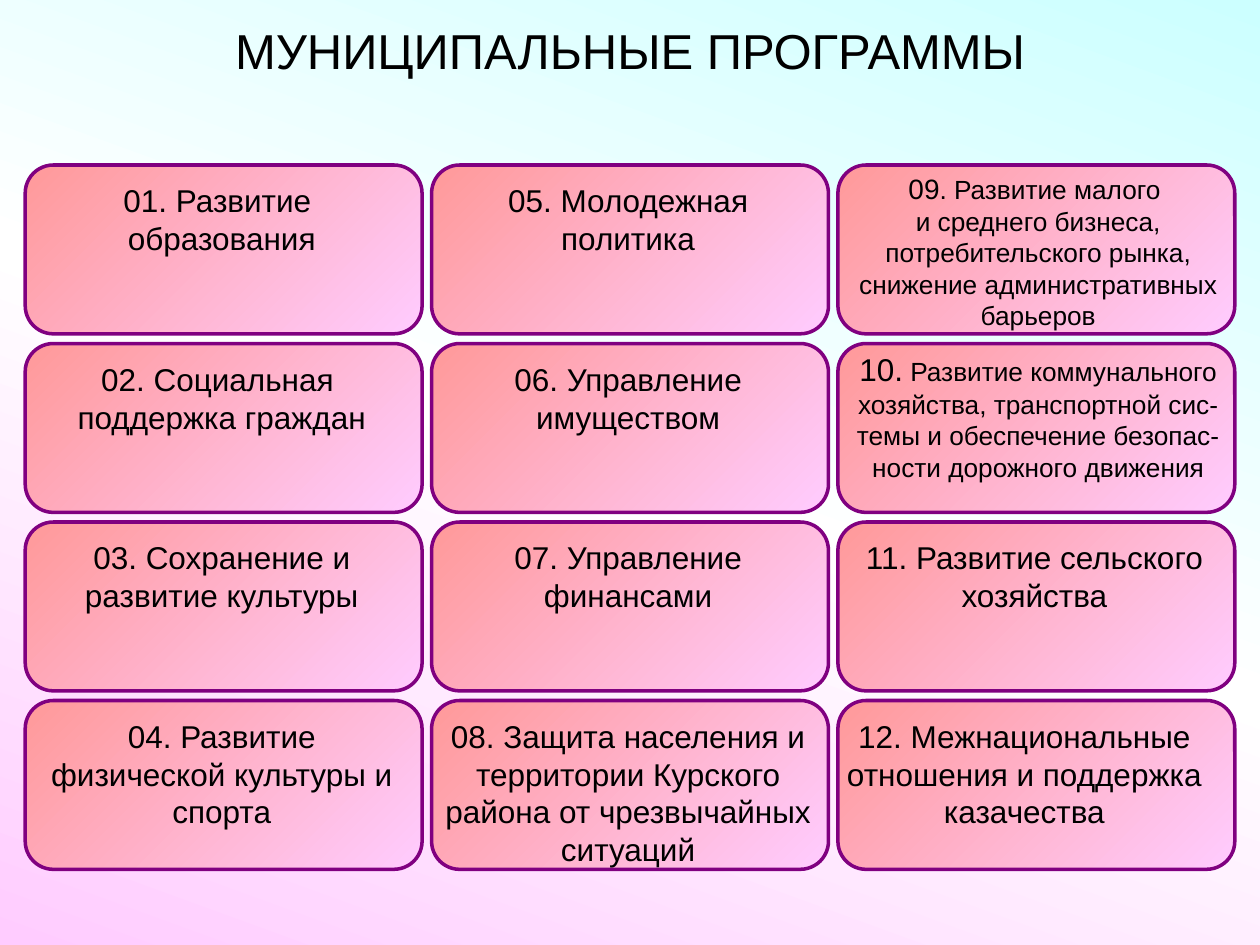
import copy

import pptx
import pptx.dml.color
import pptx.enum.shapes
import pptx.enum.text
import pptx.oxml.ns
import pptx.util

Inches = pptx.util.Inches
Pt = pptx.util.Pt
RGBColor = pptx.dml.color.RGBColor

TITLE = "МУНИЦИПАЛЬНЫЕ ПРОГРАММЫ"
# Programmes by column; each is a list of paragraphs, each paragraph a list of (text, size)
PROGRAMMES = [
    [
        [[("01. Развитие ", 18)], [("образования", 18)]],
        [[("02. Социальная ", 18)], [("поддержка граждан", 18)]],
        [[("03. Сохранение и развитие культуры", 18)]],
        [[("04. Развитие физической культуры и спорта", 18)]],
    ],
    [
        [[("05. Молодежная политика", 18)]],
        [[("06. Управление имуществом", 18)]],
        [[("07. Управление финансами", 18)]],
        [[("08. Защита населения и территории Курского района от чрезвычайных ситуаций", 18)]],
    ],
    [
        [[("09", 16), (". Развитие малого ", 15)],
         [("и среднего бизнеса, потребительского рынка, "
           "снижение административных барьеров", 15)]],
        [[("10.", 18), (" Развитие коммунального хозяйства, транспортной сис-темы "
                        "и обеспечение безопас-ности дорожного движения", 15)]],
        [[("11. Развитие сельского хозяйства", 18)]],
        [[("12. Межнациональные отношения и поддержка казачества", 18)]],
    ],
]
# Labels placed off the regular grid: (column, row) -> left, top, width, height
SPECIAL_LABELS = {
    (2, 0): (6.48, 1.31, 3.52, 1.37),
    (2, 1): (6.48, 2.73, 3.52, 1.15),
    (2, 3): (6.57, 5.64, 3.12, 1),
}

FONT = "Arial"
BLACK = RGBColor(0x00, 0x00, 0x00)
WHITE = RGBColor(0xFF, 0xFF, 0xFF)
CYAN = RGBColor(0xCC, 0xFF, 0xFF)
PINK = RGBColor(0xFF, 0xCC, 0xFF)
CORAL = RGBColor(0xFF, 0x99, 0x99)
PURPLE = RGBColor(0x80, 0x00, 0x80)

GRID_LEFT, GRID_TOP = 0.2, 1.31
COLUMN_STEP = (6.65 - GRID_LEFT) / 2
ROW_STEP = (5.56 - GRID_TOP) / 3
BOX_WIDTH, BOX_HEIGHT = 3.15, 1.34
LABEL_WIDTH, LABEL_OFFSET = 3.12, 0.08


def set_gradient(fill, element, colors, clockwise_angle):
    """Spread the colours evenly over a linear gradient."""
    fill.gradient()
    fill.gradient_angle = 360 - clockwise_angle
    stop_list = element.find(".//" + pptx.oxml.ns.qn("a:gsLst"))
    while len(stop_list) < len(colors):
        stop_list.append(copy.deepcopy(stop_list[-1]))
    for index, (stop, color) in enumerate(zip(fill.gradient_stops, colors)):
        stop.color.rgb = color
        stop.position = index / (len(colors) - 1)


def add_run(paragraph, text, size):
    run = paragraph.add_run()
    run.text = text
    run.font.name = FONT
    run.font.size = Pt(size)
    run.font.color.rgb = BLACK


def add_box(slide, left, top):
    box = slide.shapes.add_shape(
        pptx.enum.shapes.MSO_SHAPE.ROUNDED_RECTANGLE,
        Inches(left), Inches(top), Inches(BOX_WIDTH), Inches(BOX_HEIGHT))
    box.shadow.inherit = False
    set_gradient(box.fill, box.element, [CORAL, PINK], 45)
    box.line.color.rgb = PURPLE
    box.line.width = Pt(2)


def add_label(slide, place, paragraphs):
    label = slide.shapes.add_textbox(*map(Inches, place))
    frame = label.text_frame
    frame.word_wrap = True
    frame.auto_size = pptx.enum.text.MSO_AUTO_SIZE.SHAPE_TO_FIT_TEXT
    for index, runs in enumerate(paragraphs):
        paragraph = frame.add_paragraph() if index else frame.paragraphs[0]
        paragraph.alignment = pptx.enum.text.PP_ALIGN.CENTER
        for text, size in runs:
            add_run(paragraph, text, size)


def add_title(slide):
    title = slide.shapes.title
    title.left, title.top = Inches(0), Inches(0.23)
    title.width, title.height = Inches(10), Inches(0.39)
    frame = title.text_frame
    frame.auto_size = pptx.enum.text.MSO_AUTO_SIZE.NONE
    frame.vertical_anchor = pptx.enum.text.MSO_ANCHOR.MIDDLE
    paragraph = frame.paragraphs[0]
    paragraph.alignment = pptx.enum.text.PP_ALIGN.CENTER
    paragraph.line_spacing = 0.9
    add_run(paragraph, TITLE, 28)


def main():
    presentation = pptx.Presentation()
    presentation.slide_width = Inches(10)
    presentation.slide_height = Inches(7.5)
    slide = presentation.slides.add_slide(presentation.slide_layouts[5])
    set_gradient(slide.background.fill, slide.element, [CYAN, WHITE, PINK], 110)
    add_title(slide)

    cells = [(column, row) for column in range(3) for row in range(4)]
    for column, row in cells:
        add_box(slide, GRID_LEFT + column * COLUMN_STEP, GRID_TOP + row * ROW_STEP)
    for column, row in cells:
        left = GRID_LEFT + column * COLUMN_STEP
        top = GRID_TOP + row * ROW_STEP + LABEL_OFFSET
        height = {(0, 3): 1, (1, 3): 1.3}.get((column, row), 0.7)
        place = SPECIAL_LABELS.get((column, row), (left, top, LABEL_WIDTH, height))
        add_label(slide, place, PROGRAMMES[column][row])

    presentation.save("out.pptx")


if __name__ == "__main__":
    main()
